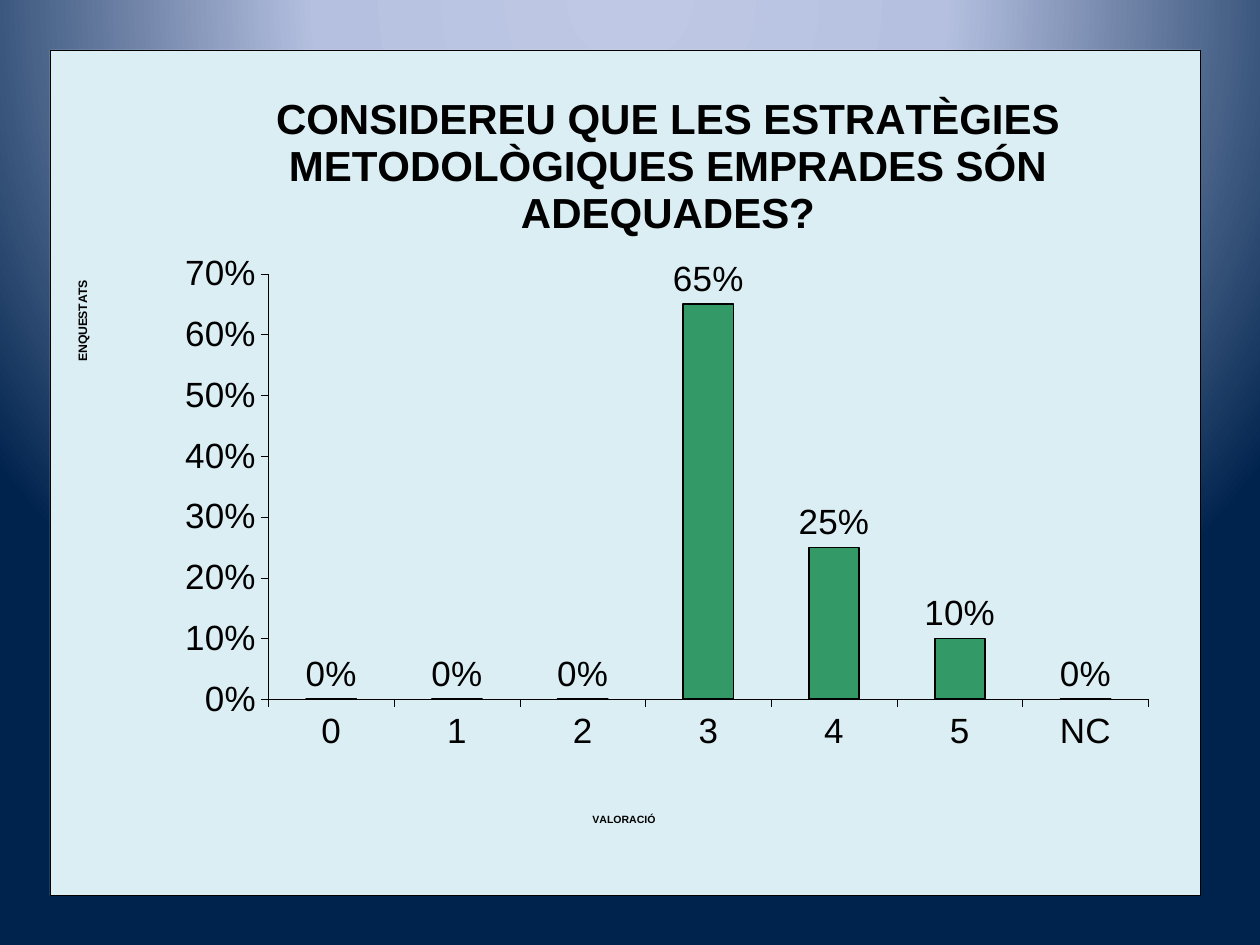
from lxml import etree
from pptx import Presentation
from pptx.chart.data import CategoryChartData
from pptx.dml.color import RGBColor
from pptx.enum.chart import XL_CHART_TYPE, XL_LABEL_POSITION, XL_TICK_MARK
from pptx.oxml import parse_xml
from pptx.oxml.ns import nsdecls, qn
from pptx.util import Cm, Pt

COLUMNS = XL_CHART_TYPE.COLUMN_CLUSTERED
OUTSIDE_END = XL_LABEL_POSITION.OUTSIDE_END
TICK_OUTSIDE = XL_TICK_MARK.OUTSIDE
TICK_NONE = XL_TICK_MARK.NONE

QUESTION = "CONSIDEREU QUE LES ESTRATÈGIES METODOLÒGIQUES EMPRADES SÓN ADEQUADES?"
RATING_TITLE = "VALORACIÓ"
RESPONDENTS_TITLE = "ENQUESTATS"
ANSWERS = {"0": 0, "1": 0, "2": 0, "3": 0.65, "4": 0.25, "5": 0.1, "NC": 0}
PERCENT = "0%"

THEME = {
    "font": "Arial",
    "ink": "000000",
    "bar": "339966",
    "panel": "DBEEF4",
    "backdrop": [(0, "BFC9E5"), (40, "B5C0E0"), (100, "00234D")],
    "question_size": 24,
    "value_size": 20,
    "respondents_size": 7,
    "rating_size": 6,
    "hairline": 0.25,
    "bar_line": 1,
}


def paint_backdrop(slide):
    stops = "".join(
        f'<a:gs pos="{percent * 1000}"><a:srgbClr val="{color}"/></a:gs>'
        for percent, color in THEME["backdrop"])
    backdrop = parse_xml(
        f'<p:bg {nsdecls("p", "a")}><p:bgPr><a:gradFill rotWithShape="1">'
        f'<a:gsLst>{stops}</a:gsLst><a:path path="circle">'
        '<a:fillToRect l="50000" t="-80000" r="50000" b="180000"/></a:path>'
        '</a:gradFill><a:effectLst/></p:bgPr></p:bg>')
    slide.element.cSld.insert(0, backdrop)


def place(element, index, **fractions):
    """Give a chart part a manual layout, in fractions of the chart."""
    for automatic in element.findall(qn("c:layout")):
        element.remove(automatic)
    layout = etree.Element(qn("c:layout"))
    manual = etree.SubElement(layout, qn("c:manualLayout"))
    if "w" in fractions:
        etree.SubElement(manual, qn("c:layoutTarget"), val="inner")
    for side in ("x", "y"):
        etree.SubElement(manual, qn(f"c:{side}Mode"), val="edge")
    for side, fraction in fractions.items():
        etree.SubElement(manual, qn(f"c:{side}"), val=str(fraction))
    element.insert(index, layout)


def style_font(font, size, bold=False):
    font.name = THEME["font"]
    font.size = Pt(size)
    font.bold = bold
    font.color.rgb = RGBColor.from_string(THEME["ink"])


def style_line(line, width):
    line.color.rgb = RGBColor.from_string(THEME["ink"])
    line.width = Pt(width)


def add_title(owner, text, size, x, y):
    """Title a chart or an axis."""
    owner.has_title = True
    title = owner.chart_title if hasattr(owner, "chart_title") else owner.axis_title
    paragraph = title.text_frame.paragraphs[0]
    paragraph.text = text
    style_font(paragraph.runs[0].font, size, bold=True)
    place(title._element, 1, x=x, y=y)
    return title


def fill_panel(chart):
    panel = parse_xml(
        f'<c:spPr {nsdecls("c", "a")}>'
        f'<a:solidFill><a:srgbClr val="{THEME["panel"]}"/></a:solidFill>'
        f'<a:ln w="{Pt(THEME["hairline"])}"><a:solidFill>'
        f'<a:srgbClr val="{THEME["ink"]}"/></a:solidFill></a:ln></c:spPr>')
    chart._chartSpace.find(qn("c:chart")).addnext(panel)


def style_axis(axis):
    axis.has_major_gridlines = False
    axis.major_tick_mark = TICK_OUTSIDE
    axis.minor_tick_mark = TICK_NONE
    style_font(axis.tick_labels.font, THEME["value_size"])
    style_line(axis.format.line, THEME["hairline"])


def add_survey_chart(slide):
    answers = CategoryChartData(number_format=PERCENT)
    answers.categories = list(ANSWERS)
    answers.add_series("Series 1", list(ANSWERS.values()))
    chart = slide.shapes.add_chart(
        COLUMNS, Cm(1), Cm(1), Cm(23.2), Cm(17.06), answers).chart
    chart.has_legend = False
    style_font(chart.font, THEME["value_size"])
    fill_panel(chart)
    add_title(chart, QUESTION, THEME["question_size"], 0.19, 0.04)

    ratings, respondents = chart.category_axis, chart.value_axis
    for axis in (ratings, respondents):
        style_axis(axis)
    respondents.minimum_scale = 0
    respondents.maximum_scale = 0.7
    respondents.major_unit = 0.1
    respondents.tick_labels.number_format = PERCENT
    respondents.tick_labels.number_format_is_linked = False
    add_title(ratings, RATING_TITLE, THEME["rating_size"], 0.47, 0.9)
    upright = add_title(
        respondents, RESPONDENTS_TITLE, THEME["respondents_size"], 0.02, 0.27)
    body = upright._element.find(".//" + qn("a:bodyPr"))
    body.set("rot", "-5400000")
    body.set("vert", "horz")

    plot = chart.plots[0]
    plot.gap_width = 150
    plot.vary_by_categories = False
    place(chart._chartSpace.find(".//" + qn("c:plotArea")), 0,
          x=0.19, y=0.265, w=0.765, h=0.503)
    bars = plot.series[0]
    bars.format.fill.solid()
    bars.format.fill.fore_color.rgb = RGBColor.from_string(THEME["bar"])
    style_line(bars.format.line, THEME["bar_line"])
    labels = bars.data_labels
    labels.show_value = True
    labels.number_format = PERCENT
    labels.number_format_is_linked = False
    labels.position = OUTSIDE_END
    style_font(labels.font, THEME["value_size"])


def main():
    presentation = Presentation()
    presentation.slide_width = Cm(25.4)
    presentation.slide_height = Cm(19.05)
    slide = presentation.slides.add_slide(presentation.slide_layouts[6])
    paint_backdrop(slide)
    add_survey_chart(slide)
    presentation.save("out.pptx")


if __name__ == "__main__":
    main()
